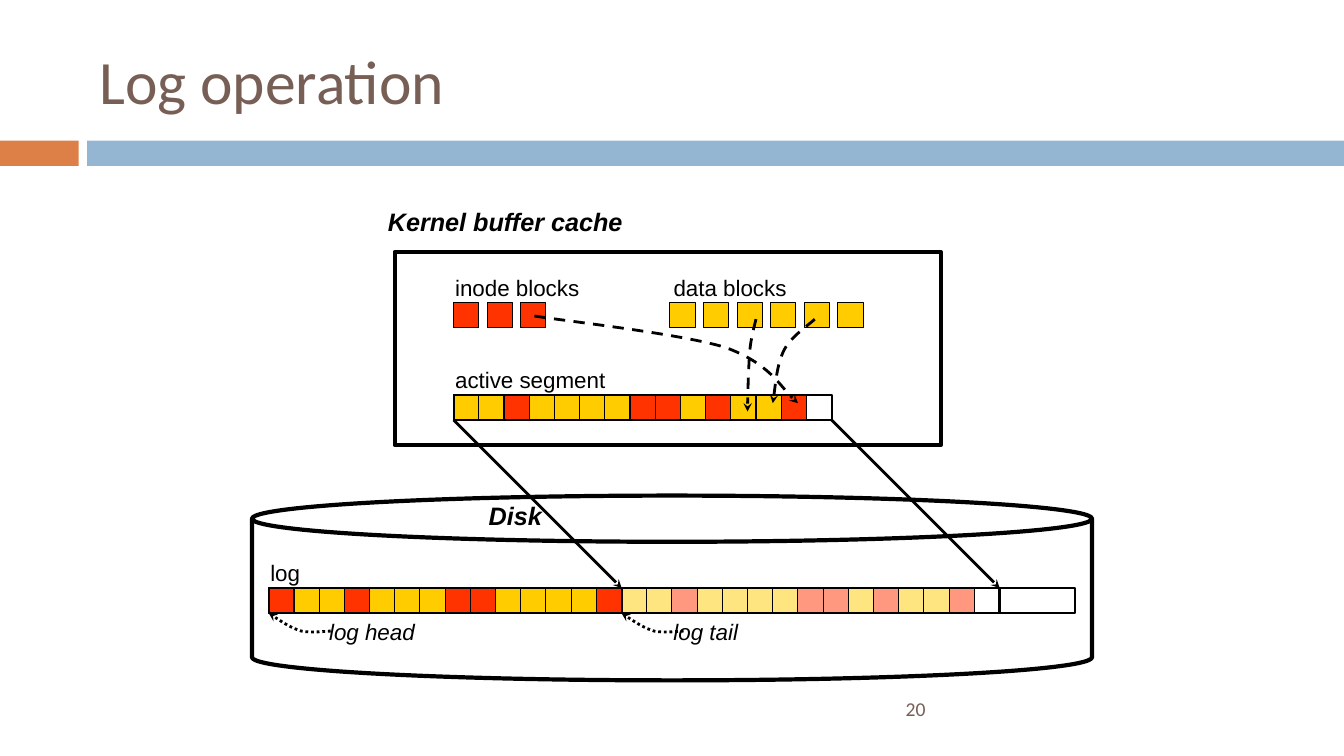
from lxml.etree import SubElement
from pptx import Presentation
from pptx.dml.color import RGBColor
from pptx.enum.dml import MSO_LINE
from pptx.enum.shapes import MSO_CONNECTOR, MSO_SHAPE
from pptx.enum.text import MSO_ANCHOR
from pptx.oxml.ns import qn
from pptx.util import Pt

PX = 9525  # EMU per px, 96 px to the inch
BLACK = RGBColor(0x00, 0x00, 0x00)
BROWN = RGBColor(0x77, 0x5F, 0x55)
ORANGE = RGBColor(0xDD, 0x80, 0x47)
BLUE = RGBColor(0x94, 0xB6, 0xD2)
RED = RGBColor(0xFF, 0x33, 0x00)
YELLOW = RGBColor(0xFF, 0xCC, 0x00)

# Content: i = inode block, d = data block
BLOCK_COLORS = {"i": RED, "d": YELLOW}
BLOCK = 24
BLOCK_PITCH = 32
SEGMENT = "ddiddddiididdi"
OLD_LOG = "iddidddiiddddi"
SEGMENT_W = 15 * BLOCK
SEGMENT_X, SEGMENT_Y = 432, 376
LOG_X, LOG_Y, LOG_W = 256, 560, 768
TAIL_X = LOG_X + len(OLD_LOG) * BLOCK

LOOSE_BLOCKS = [("iii", 432, 288), ("dddddd", 638, 288)]
HEADINGS = [  # text, left, top
    ("Kernel buffer cache", 360, 192),
    ("Disk", 456, 472),
]
LABELS = [  # text, left, top, width, italic
    ("inode blocks", 424, 256, 139, False),
    ("data blocks", 632, 256, 129, False),
    ("active segment", 424, 344, 164, False),
    ("log", 248, 528, 48, False),
    ("log head", 304, 584, 114, True),
    ("log tail", 632, 584, 114, True),
]
# Curves: a start point, then three points for each Bezier piece
POINTER = [(59, 17), (55, 17), (41, 19), (31, 17), (21, 14), (6, 4), (0, 0)]
COPY_CURVES = [
    [(509, 301), (540, 306), (649, 318), (691, 331),
     (732, 346), (746, 373), (760, 384)],
    [(720, 304), (719, 309), (715, 322), (714, 336),
     (713, 350), (712, 380), (712, 392)],
    [(776, 304), (771, 309), (754, 320), (747, 333),
     (740, 347), (738, 373), (736, 384)],
]

prs = Presentation()
prs.slide_width, prs.slide_height = 1280 * PX, 720 * PX
s = prs.slides.add_slide(prs.slide_layouts[6])


def add_text(text, x, y, w, h, size, font="Arial", color=BLACK, bold=False,
             italic=False, wrap=True, anchor=MSO_ANCHOR.TOP):
    tf = s.shapes.add_textbox(x * PX, y * PX, w * PX, h * PX).text_frame
    tf.word_wrap = wrap
    tf.vertical_anchor = anchor
    r = tf.paragraphs[0].add_run()
    r.text = text
    r.font.name, r.font.size = font, Pt(size)
    r.font.bold, r.font.italic = bold, italic
    r.font.color.rgb = color


def add_box(parent, x, y, w, h, fill=None, line=None, alpha=None,
            kind=MSO_SHAPE.RECTANGLE):
    sp = parent.add_shape(kind, x * PX, y * PX, w * PX, h * PX)
    sp.shadow.inherit = False
    if fill is None:
        sp.fill.background()
    else:
        sp.fill.solid()
        sp.fill.fore_color.rgb = fill
    if alpha:
        clr = sp._element.spPr.find(qn("a:solidFill")).find(qn("a:srgbClr"))
        SubElement(clr, qn("a:alpha"), val=str(alpha * 1000))
    if line is None:
        sp.line.fill.background()
    else:
        sp.line.color.rgb = BLACK
        sp.line.width = Pt(line)
    return sp


def add_blocks(parent, kinds, x, y, pitch=BLOCK, alpha=None):
    for n, kind in enumerate(kinds):
        add_box(parent, x + n * pitch, y, BLOCK, BLOCK,
                BLOCK_COLORS[kind], 0.75, alpha)


def add_segment(x, y, alpha=None):
    group = s.shapes.add_group_shape().shapes
    add_blocks(group, SEGMENT, x, y, alpha=alpha)
    add_box(group, x, y, SEGMENT_W, BLOCK, line=1.5)


def style_arrow(line):
    line.color.rgb = BLACK
    line.width = Pt(2)
    SubElement(line._get_or_add_ln(), qn("a:tailEnd"), type="stealth")


def add_curve(points, dash):
    builder = s.shapes.build_freeform(*points[0], scale=PX)
    builder.add_line_segments(points[1:], close=False)
    sp = builder.convert_to_shape()
    # Join each three straight pieces into one Bezier piece
    path = next(sp._element.iter(qn("a:path")))
    pieces = path.findall(qn("a:lnTo"))
    for n in range(0, len(pieces), 3):
        bezier = SubElement(path, qn("a:cubicBezTo"))
        for piece in pieces[n:n + 3]:
            bezier.append(piece[0])
            path.remove(piece)
    sp.shadow.inherit = False
    sp.fill.background()
    sp.line.dash_style = dash
    style_arrow(sp.line)


# Title, bars and page number
add_box(s.shapes, 0, 134, 75, 24, ORANGE)
add_box(s.shapes, 83, 134, 1197, 24, BLUE)
add_text("20", 853, 656, 373, 38, 14, "Calibri", BROWN,
         anchor=MSO_ANCHOR.MIDDLE)
add_text("Log operation", 85, 24, 1141, 104, 44, "Calibri", BROWN,
         anchor=MSO_ANCHOR.MIDDLE)

# Blocks in the cache and the log on disk
for kinds, x, y in LOOSE_BLOCKS:
    add_blocks(s.shapes, kinds, x, y, BLOCK_PITCH)
add_segment(SEGMENT_X, SEGMENT_Y)
add_blocks(s.shapes, OLD_LOG, LOG_X, LOG_Y)
add_box(s.shapes, LOG_X, LOG_Y, LOG_W, BLOCK, line=1.5)

# Disk and cache outlines
disk = add_box(s.shapes, 240, 472, 800, 176, line=3, kind=MSO_SHAPE.CAN)
disk.adjustments[0] = 0.25
add_box(s.shapes, 376, 240, 520, 184, line=3)

# Headings and labels
for text, x, y in HEADINGS:
    add_text(text, x, y, 292, 38, 18, bold=True, italic=True)
for text, x, y, w, italic in LABELS:
    add_text(text, x, y, w, 36, 16, italic=italic, wrap=italic)

# Pointers to log head and log tail
for x in (LOG_X, TAIL_X):
    add_curve([(x + dx, LOG_Y + BLOCK + dy) for dx, dy in POINTER],
              MSO_LINE.ROUND_DOT)

# Segment written to the end of the log
for dx in (0, SEGMENT_W):
    c = s.shapes.add_connector(
        MSO_CONNECTOR.STRAIGHT, (SEGMENT_X + dx) * PX,
        (SEGMENT_Y + BLOCK) * PX, (TAIL_X + dx) * PX, LOG_Y * PX)
    style_arrow(c.line)
    SubElement(c._element.spPr, qn("a:effectLst"))
add_segment(TAIL_X, LOG_Y, alpha=50)

# Blocks copied into the active segment
for points in COPY_CURVES:
    add_curve(points, MSO_LINE.DASH)

prs.save("out.pptx")
